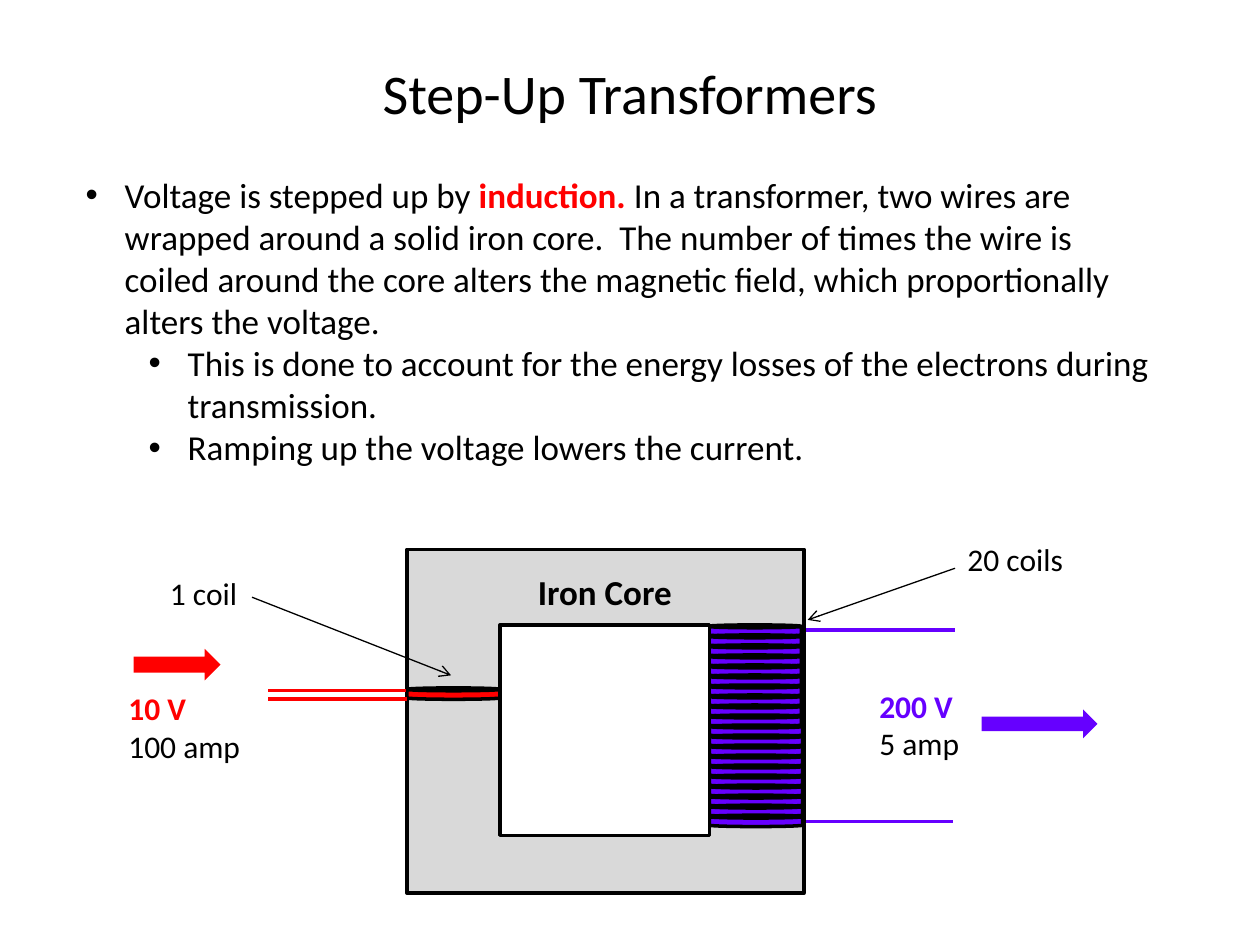
from pptx import Presentation
from pptx.dml.color import RGBColor
from pptx.enum.shapes import MSO_CONNECTOR, MSO_SHAPE
from pptx.enum.text import MSO_ANCHOR, MSO_AUTO_SIZE, PP_ALIGN
from pptx.oxml.ns import qn
from pptx.util import Inches, Pt
from lxml.etree import SubElement

COLORS = {"black": "000000", "white": "FFFFFF", "iron": "D9D9D9",
          "primary": "FF0000", "secondary": "6600FF"}
FONT = "Calibri"

# Content: a run is (text, color, bold)
TITLE = "Step-Up Transformers"
BULLETS = [  # level, runs
    (0, [("Voltage is stepped up by ", "black", False),
         ("induction. ", "primary", True),
         ("In a transformer, two wires are wrapped around a solid iron core.  "
          "The number of times the wire is coiled around the core alters the magnetic "
          "field, which proportionally alters the voltage.", "black", False)]),
    (1, [("This is done to account for the energy losses of the electrons "
          "during transmission.", "black", False)]),
    (1, [("Ramping up the voltage lowers the current.", "black", False)]),
]
LABELS = [  # box, size, one run per paragraph
    ((1.25, 4.51, 0.92, 0.4), 18, [("1 coil", "black", False)]),
    ((7.58, 4.24, 1.08, 0.4), 18, [("20 coils", "black", False)]),
    ((6.88, 5.4, 1.38, 0.71), 18, [("200 V", "secondary", True), ("5 amp", "black", False)]),
    ((0.92, 5.42, 1.38, 0.71), 18, [("10 V", "primary", True), ("100 amp", "black", False)]),
    ((4.17, 4.48, 1.5, 0.44), 20, [("Iron Core", "black", True)]),
]
SECONDARY_WIRES = [((6.32, 6.52), (7.56, 6.52)), ((6.34, 5), (7.58, 5))]
PRIMARY_WIRES = [((3.22, 5.48), (2.13, 5.48)), ((3.23, 5.55), (2.13, 5.55))]
POINTERS = [((2, 4.74), (3.58, 5.36)), ((7.58, 4.51), (6.41, 4.92))]
FLOW_ARROWS = [((1.06, 5.15, 0.69, 0.25), "primary"),
               ((7.79, 5.63, 0.92, 0.23), "secondary")]
CORE = (3.23, 4.36, 3.15, 2.73)
WINDOW = (3.97, 4.96, 1.66, 1.67)
COIL_SIZE = (0.74, 0.09)
COIL_COUNT, FIRST_COIL, LAST_COIL = 20, 4.96, 6.47


def color(name):
    return RGBColor.from_string(COLORS[name])


def add_run(paragraph, text, color_name, bold, size):
    run = paragraph.add_run()
    run.text = text
    run.font.name, run.font.size, run.font.bold = FONT, Pt(size), bold
    run.font.color.rgb = color(color_name)


def place(shape, box):
    shape.left, shape.top, shape.width, shape.height = map(Inches, box)


def add_shape(kind, box, fill, outlined=True):
    shape = slide.shapes.add_shape(kind, *map(Inches, box))
    shape.shadow.inherit = False
    shape.fill.solid()
    shape.fill.fore_color.rgb = color(fill)
    if outlined:
        shape.line.color.rgb = color("black")
        shape.line.width = Pt(2)
    else:
        shape.line.fill.background()


def add_line(start, end, color_name, width, arrow=False):
    line = slide.shapes.add_connector(MSO_CONNECTOR.STRAIGHT, *map(Inches, start + end))
    line.line.color.rgb = color(color_name)
    line.line.width = Pt(width)
    if arrow:
        SubElement(line.line._get_or_add_ln(), qn("a:tailEnd"), type="arrow")
    SubElement(line._element.spPr, qn("a:effectLst"))


presentation = Presentation()
presentation.slide_width, presentation.slide_height = Inches(10), Inches(7.5)
slide = presentation.slides.add_slide(presentation.slide_layouts[1])

# Title
title = slide.shapes.title
place(title, (0.5, 0.3, 9, 0.87))
title.text_frame.vertical_anchor = MSO_ANCHOR.MIDDLE
title_paragraph = title.text_frame.paragraphs[0]
title_paragraph.alignment = PP_ALIGN.CENTER
add_run(title_paragraph, TITLE, "black", False, 32)

# Bulleted explanation
body = slide.placeholders[1]
place(body, (0.58, 1.33, 8.75, 2.46))
frame = body.text_frame
frame.auto_size = MSO_AUTO_SIZE.NONE
for index, (level, runs) in enumerate(BULLETS):
    paragraph = frame.add_paragraph() if index else frame.paragraphs[0]
    paragraph.level = level
    paragraph.space_before = Pt(0)
    properties = paragraph._p.get_or_add_pPr()
    properties.set("marL", str(Inches(0.31 + 0.5 * level)))
    properties.set("indent", str(Inches(-0.31)))
    SubElement(properties, qn("a:buFont"), typeface="Arial")
    SubElement(properties, qn("a:buChar"), char="•")
    for run in runs:
        add_run(paragraph, *run, 20)

# Iron core, with the wires leading to it
for start, end in SECONDARY_WIRES:
    add_line(start, end, "secondary", 2.25)
add_shape(MSO_SHAPE.RECTANGLE, CORE, "iron")
add_shape(MSO_SHAPE.CAN, (CORE[0], 5.46, *COIL_SIZE), "primary")
for start, end in PRIMARY_WIRES:
    add_line(start, end, "primary", 2.25)

# Secondary winding: two stacks of ten, the lower one slightly to the right
pitch = (LAST_COIL - FIRST_COIL) / (COIL_COUNT - 1)
for index in range(COIL_COUNT):
    left = 5.62 if index < COIL_COUNT / 2 else 5.63
    add_shape(MSO_SHAPE.CAN, (left, FIRST_COIL + index * pitch, *COIL_SIZE), "secondary")
add_shape(MSO_SHAPE.RECTANGLE, WINDOW, "white")

# Pointers and current arrows
for start, end in POINTERS:
    add_line(start, end, "black", 0.75, arrow=True)
for box, fill in FLOW_ARROWS:
    add_shape(MSO_SHAPE.RIGHT_ARROW, box, fill, outlined=False)

# Labels
for box, size, runs in LABELS:
    frame = slide.shapes.add_textbox(*map(Inches, box)).text_frame
    frame.word_wrap = True
    for index, run in enumerate(runs):
        paragraph = frame.add_paragraph() if index else frame.paragraphs[0]
        add_run(paragraph, *run, size)

presentation.save("out.pptx")
